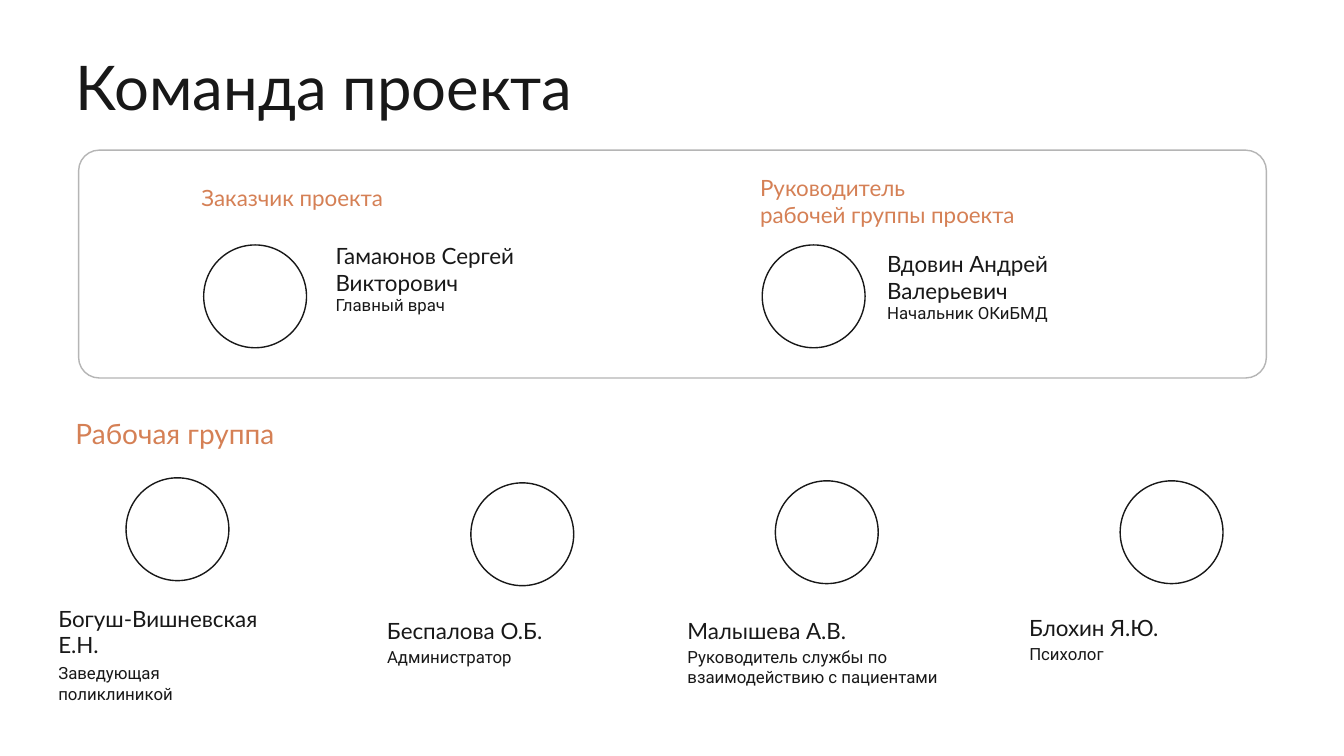
from pptx import Presentation
from pptx import util as u
from pptx.dml.color import RGBColor
from pptx.enum import shapes, text

COLORS = {"ink": "181818", "accent": "D58055", "frame": "B5B5B5"}
HEADING_FONT, ROLE_FONT = "Lato", "Roboto"
PORTRAIT_SIZE = 1.02

LEADERS = [
    (1.9, 1.78, ["Заказчик проекта"], 3.23, 2.35,
     "Гамаюнов Сергей Викторович", "Главный врач"),
    (7.44, 1.68, ["Руководитель", "рабочей группы проекта"], 8.7, 2.43,
     "Вдовин Андрей Валерьевич", "Начальник ОКиБМД"),
]
MEMBERS = [
    (0.48, 5.95, 0.64, "Богуш-Вишневская Е.Н.", 0.58, 2.29, 0.5,
     "Заведующая поликлиникой", 1.25, 4.74),
    (3.74, 6.07, 0.37, "Беспалова О.Б.", 0.3, 2.29, 0.3,
     "Администратор", 4.67, 4.79),
    (6.72, 6.07, 0.37, "Малышева А.В.", 0.3, 2.73, 0.5,
     "Руководитель службы по взаимодействию с пациентами", 7.69, 4.77),
    (10.11, 6.04, 0.37, "Блохин Я.Ю.", 0.3, 2.29, 0.3,
     "Психолог", 11.11, 4.77),
]


def add_text(slide, box, lines, size, color="ink", font=HEADING_FONT, spacing=None):
    frame = slide.shapes.add_textbox(*map(u.Inches, box)).text_frame
    frame.word_wrap = True
    frame.vertical_anchor = text.MSO_ANCHOR.TOP
    for index, line in enumerate(lines):
        paragraph = frame.add_paragraph() if index else frame.paragraphs[0]
        paragraph.text = line
        paragraph.line_spacing = spacing
        paragraph.font.size = u.Pt(size)
        paragraph.font.name = font
        paragraph.font.color.rgb = RGBColor.from_string(COLORS[color])


def add_outline(slide, kind, box, color):
    outline = slide.shapes.add_shape(kind, *map(u.Inches, box))
    outline.shadow.inherit = False
    outline.fill.background()
    outline.line.color.rgb = RGBColor.from_string(COLORS[color])
    outline.line.width = u.Pt(1)
    return outline


def add_portrait(slide, left, top):
    add_outline(slide, shapes.MSO_SHAPE.OVAL,
                (left, top, PORTRAIT_SIZE, PORTRAIT_SIZE), "ink")


def add_person(slide, left, top, name, name_height, role, role_offset,
               role_width=2.29, role_height=0.3):
    add_text(slide, (left, top, 2.5, name_height), [name], 16)
    add_text(slide, (left, top + role_offset, role_width, role_height),
             [role], 12, font=ROLE_FONT)


def add_leaders(slide, box):
    panel = add_outline(slide, shapes.MSO_SHAPE.ROUNDED_RECTANGLE, box, "frame")
    panel.adjustments[0] = 0.09
    portrait_top = box[1] + 0.94
    for left, top, heading, name_left, name_top, name, role in LEADERS:
        add_text(slide, (left, top, 3.09, 0.1 + 0.27 * len(heading)),
                 heading, 16, "accent")
        add_portrait(slide, left + 0.12, portrait_top)
        add_person(slide, name_left, name_top, name, 0.64, role, 0.52)


def add_working_group(slide, left, top):
    add_text(slide, (left, top, 3.09, 0.44), ["Рабочая группа"], 20, "accent")
    for (name_left, name_top, name_height, name, role_offset, role_width,
         role_height, role, portrait_left, portrait_top) in MEMBERS:
        add_portrait(slide, portrait_left, portrait_top)
        add_person(slide, name_left, name_top, name, name_height, role,
                   role_offset, role_width, role_height)


def main():
    deck = Presentation()
    deck.slide_width, deck.slide_height = u.Inches(13.33), u.Inches(7.5)
    slide = deck.slides.add_slide(deck.slide_layouts[6])
    add_text(slide, (0.65, 0.52, 12.67, 0.79), ["Команда проекта"], 44, spacing=0.9)
    add_leaders(slide, (0.78, 1.49, 11.78, 2.26))
    add_working_group(slide, 0.65, 4.08)
    deck.save("out.pptx")


if __name__ == "__main__":
    main()
